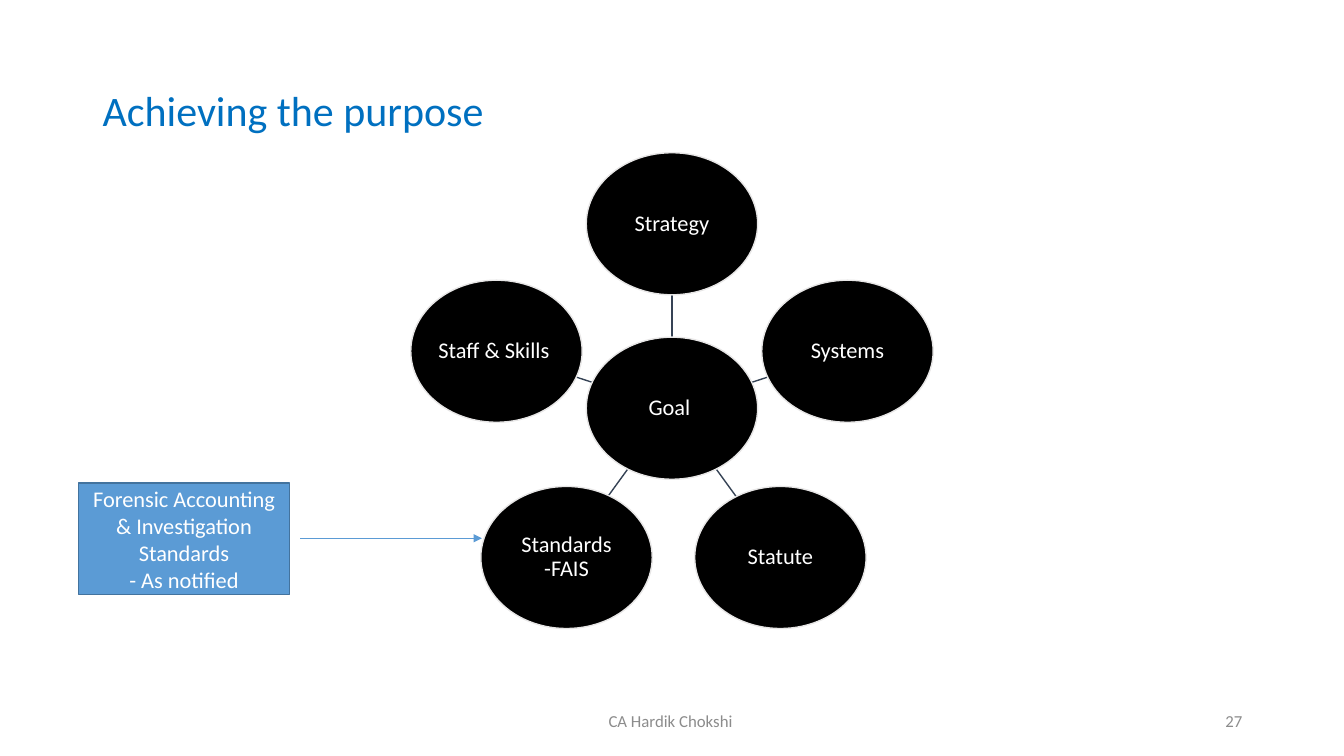
from math import cos, hypot, radians, sin

from lxml import etree
from pptx import Presentation
from pptx.dml.color import RGBColor
from pptx.enum.shapes import MSO_CONNECTOR as Connector, MSO_SHAPE as Shape
from pptx.enum.text import MSO_ANCHOR as Anchor, PP_ALIGN as Align
from pptx.oxml.ns import qn
from pptx.util import Inches, Pt

WHITE = RGBColor(0xFF, 0xFF, 0xFF)
BLACK = RGBColor(0x00, 0x00, 0x00)
TITLE_BLUE = RGBColor(0x00, 0x70, 0xC0)
FOOTER_GRAY = RGBColor(0x8C, 0x8C, 0x8C)
RIM_GRAY = RGBColor(0xE7, 0xE6, 0xE6)
SPOKE_SLATE = RGBColor(0x36, 0x43, 0x55)
NOTE_BLUE = RGBColor(0x5B, 0x9B, 0xD5)
NOTE_RIM = RGBColor(0x43, 0x73, 0x9E)

WIDTH, HEIGHT = 13.33, 7.5
MARGIN = 0.92
FOOTER_TOP, FOOTER_HEIGHT = 6.95, 0.4
HUB_X, HUB_Y = WIDTH / 2, 4.05
ORBIT = 1.83
OVAL_WIDTH, OVAL_HEIGHT = 1.7, 1.41

prs = Presentation()
prs.slide_width, prs.slide_height = Inches(WIDTH), Inches(HEIGHT)
slide = prs.slides.add_slide(prs.slide_layouts[6])
shapes = slide.shapes


def write(shape, text, size, color, align, spacing=1.0):
    """Fill a shape with middle-anchored Calibri text, one paragraph a line."""
    frame = shape.text_frame
    frame.word_wrap = True
    frame.vertical_anchor = Anchor.MIDDLE
    frame.text = text
    for paragraph in frame.paragraphs:
        paragraph.alignment = align
        paragraph.line_spacing = spacing
        paragraph.font.name = "Calibri"
        paragraph.font.size = Pt(size)
        paragraph.font.color.rgb = color
    return frame


def draw_line(start, end, color, width):
    line = shapes.add_connector(Connector.STRAIGHT, *map(Inches, start + end))
    line.line.color.rgb = color
    line.line.width = Pt(width)
    etree.SubElement(line._element.spPr, qn("a:effectLst"))
    return line


# Title and footer
for text, left, top, width, height, size, color, align, spacing in (
    ("Achieving the purpose", MARGIN, 0.4, 11.5, 1.45, 30, TITLE_BLUE, Align.LEFT, 0.9),
    ("CA Hardik Chokshi ", 4.42, FOOTER_TOP, 4.5, FOOTER_HEIGHT, 12, FOOTER_GRAY, Align.CENTER, 1.0),
    ("27", 9.42, FOOTER_TOP, 3, FOOTER_HEIGHT, 12, FOOTER_GRAY, Align.RIGHT, 1.0),
):
    box = shapes.add_textbox(*map(Inches, (left, top, width, height)))
    write(box, text, size, color, align, spacing)

# Five ovals spaced evenly around the goal, with spokes between the rims
ovals = [("Goal ", HUB_X, HUB_Y)]
for step, label in enumerate(
    ("Strategy", "Systems", "Statute", "Standards -FAIS", "Staff & Skills ")
):
    angle = radians(72 * step - 90)
    dx, dy = cos(angle), sin(angle)
    rim = 1 / hypot(dx / (OVAL_WIDTH / 2), dy / (OVAL_HEIGHT / 2))
    start, end = (
        (HUB_X + reach * dx, HUB_Y + reach * dy) for reach in (rim, ORBIT - rim)
    )
    draw_line(start, end, SPOKE_SLATE, 1)
    nudge = 0.03 if label.startswith("Standards") else 0
    ovals.append((label, HUB_X + ORBIT * dx + nudge, HUB_Y + ORBIT * dy))

for label, x, y in ovals:
    oval = shapes.add_shape(
        Shape.OVAL,
        Inches(x - OVAL_WIDTH / 2),
        Inches(y - OVAL_HEIGHT / 2),
        Inches(OVAL_WIDTH),
        Inches(OVAL_HEIGHT),
    )
    oval.shadow.inherit = False
    oval.fill.solid()
    oval.fill.fore_color.rgb = BLACK
    oval.line.color.rgb = RIM_GRAY
    oval.line.width = Pt(1)
    frame = write(oval, label, 16, WHITE, Align.CENTER, 0.9)
    frame.margin_left = frame.margin_right = Inches(0.01)
    frame.margin_top = frame.margin_bottom = Inches(0.01)

# Note on the standards, with its arrow
note = shapes.add_shape(Shape.RECTANGLE, *map(Inches, (0.78, 4.79, 2.09, 1.11)))
note.shadow.inherit = False
note.fill.solid()
note.fill.fore_color.rgb = NOTE_BLUE
note.line.color.rgb = NOTE_RIM
note.line.width = Pt(1)
note_frame = write(
    note,
    "Forensic Accounting & Investigation Standards\n- As notified",
    16,
    WHITE,
    Align.CENTER,
)
note_frame.margin_left = note_frame.margin_right = Inches(0.13)
note_frame.margin_top = note_frame.margin_bottom = Inches(0.07)

arrow = draw_line((2.98, 5.34), (4.78, 5.34), NOTE_BLUE, 0.5)
etree.SubElement(arrow.line._get_or_add_ln(), qn("a:tailEnd"), type="triangle")

prs.save("out.pptx")
